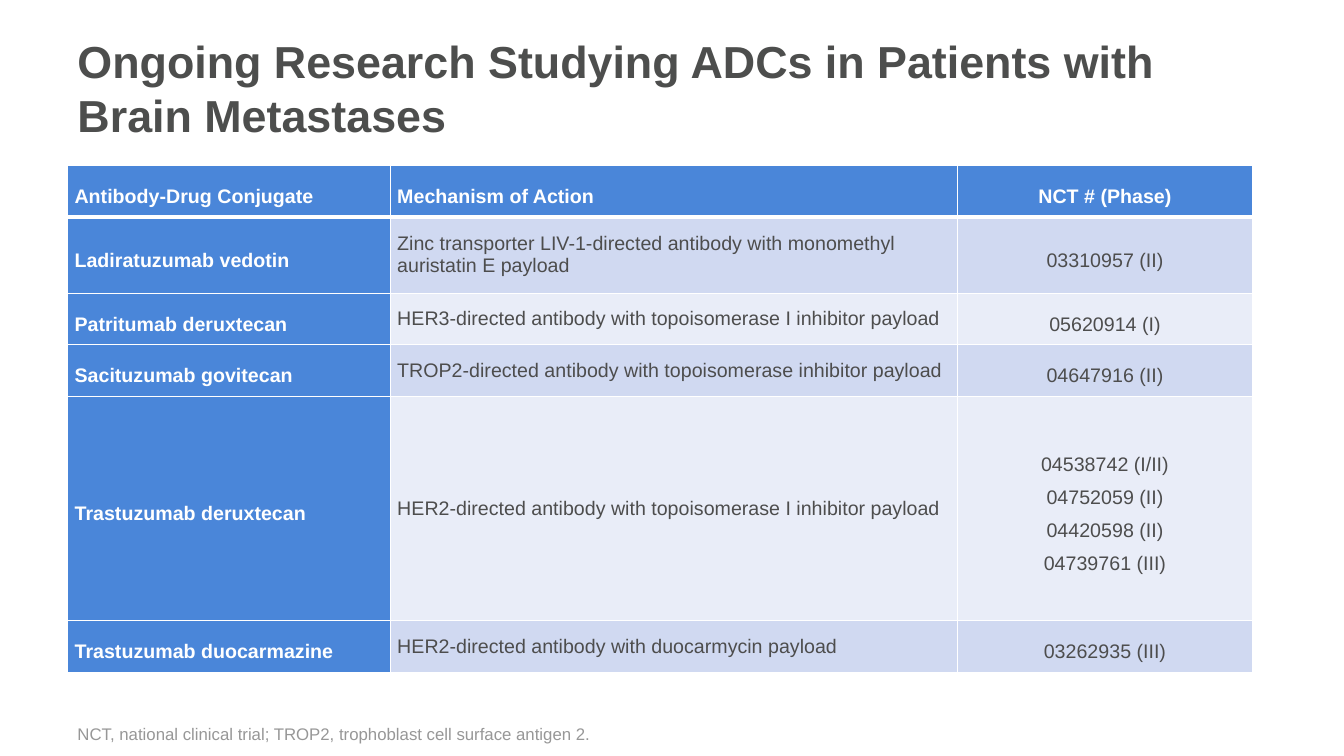
"""Build a slide with a table of antibody-drug conjugates under study."""
from lxml.etree import SubElement
from pptx import Presentation
from pptx.dml.color import RGBColor
from pptx.enum.text import MSO_ANCHOR as Anchor, PP_ALIGN as Align
from pptx.oxml.ns import qn
from pptx.util import Inches, Pt

TITLE = "Ongoing Research Studying ADCs in Patients with Brain Metastases"
FOOTNOTE = "NCT, national clinical trial; TROP2, trophoblast cell surface antigen 2."
HEADER = ("Antibody-Drug Conjugate", "Mechanism of Action", ["NCT # (Phase)"])
STUDIES = [
    ("Ladiratuzumab vedotin",
     "Zinc transporter LIV-1-directed antibody with monomethyl auristatin E payload",
     ["03310957 (II)"]),
    ("Patritumab deruxtecan",
     "HER3-directed antibody with topoisomerase I inhibitor payload",
     ["05620914 (I)"]),
    ("Sacituzumab govitecan",
     "TROP2-directed antibody with topoisomerase inhibitor payload",
     ["04647916 (II)"]),
    ("Trastuzumab deruxtecan",
     "HER2-directed antibody with topoisomerase I inhibitor payload",
     ["04538742 (I/II)", "04752059 (II)", "04420598 (II)", "04739761 (III)"]),
    ("Trastuzumab duocarmazine",
     "HER2-directed antibody with duocarmycin payload",
     ["03262935 (III)"]),
]
COLUMN_WIDTHS = (3.2, 5.63, 2.92)
ROW_HEIGHTS = (0.51, 0.76, 0.51, 0.51, 2.23, 0.51)
LEFT, WIDTH = 0.67, 11.75

WHITE = RGBColor(0xFF, 0xFF, 0xFF)
BLUE = RGBColor(0x4A, 0x86, 0xD9)
BANDS = (RGBColor(0xE9, 0xED, 0xF8), RGBColor(0xD0, 0xD9, 0xF1))
TITLE_GRAY = RGBColor(0x4D, 0x4E, 0x4D)
BODY_GRAY = RGBColor(0x4D, 0x4D, 0x4D)
NOTE_GRAY = RGBColor(0x97, 0x97, 0x97)


def write(frame, lines, size, color, bold=False, align=Align.LEFT, spacing=None):
    for index, line in enumerate(lines):
        para = frame.add_paragraph() if index else frame.paragraphs[0]
        para.alignment = align
        para.line_spacing = spacing
        span = para.add_run()
        span.text = line
        span.font.name = "Arial"
        span.font.size = Pt(size)
        span.font.bold = bold
        span.font.color.rgb = color


def add_text(page, text, top, height, anchor, size, color, bold=False):
    box = page.shapes.add_textbox(Inches(LEFT), Inches(top), Inches(WIDTH), Inches(height))
    box.text_frame.word_wrap = True
    box.text_frame.vertical_anchor = anchor
    write(box.text_frame, [text], size, color, bold)


def add_borders(cell, top, bottom):
    properties = cell._tc.get_or_add_tcPr()
    for side, points in (("L", 1), ("R", 1), ("T", top), ("B", bottom)):
        line = SubElement(properties, qn(f"a:ln{side}"), w=str(Pt(points)))
        SubElement(SubElement(line, qn("a:solidFill")), qn("a:srgbClr"), val=str(WHITE))


def fill_cell(cell, row, column, content):
    strong = row == 0 or column == 0
    cell.margin_left = cell.margin_right = Inches(0.07)
    cell.margin_top = cell.margin_bottom = 0
    cell.vertical_anchor = Anchor.MIDDLE
    add_borders(cell, top=3 if row == 1 else 1, bottom=3 if row == 0 else 1)
    cell.fill.solid()
    cell.fill.fore_color.rgb = BLUE if strong else BANDS[row % 2]
    write(cell.text_frame, content if column == 2 else [content], 14,
          WHITE if strong else BODY_GRAY, strong,
          Align.CENTER if column == 2 else Align.LEFT,
          1.5 if strong or column == 2 else None)


def add_studies(page):
    rows = [HEADER, *STUDIES]
    table = page.shapes.add_table(
        len(rows), len(HEADER), Inches(LEFT), Inches(1.64),
        Inches(WIDTH), Inches(sum(ROW_HEIGHTS))).table
    for column, width in zip(table.columns, COLUMN_WIDTHS):
        column.width = Inches(width)
    for row, height in zip(table.rows, ROW_HEIGHTS):
        row.height = Inches(height)
    for row, contents in enumerate(rows):
        for column, content in enumerate(contents):
            fill_cell(table.cell(row, column), row, column, content)


def main():
    deck = Presentation()
    deck.slide_width, deck.slide_height = Inches(13.33), Inches(7.5)
    page = deck.slides.add_slide(deck.slide_layouts[6])
    add_text(page, FOOTNOTE, 6.95, 0.48, Anchor.BOTTOM, 12, NOTE_GRAY)
    add_text(page, TITLE, 0.22, 1.3, Anchor.MIDDLE, 32, TITLE_GRAY, bold=True)
    add_studies(page)
    deck.save("out.pptx")


if __name__ == "__main__":
    main()
